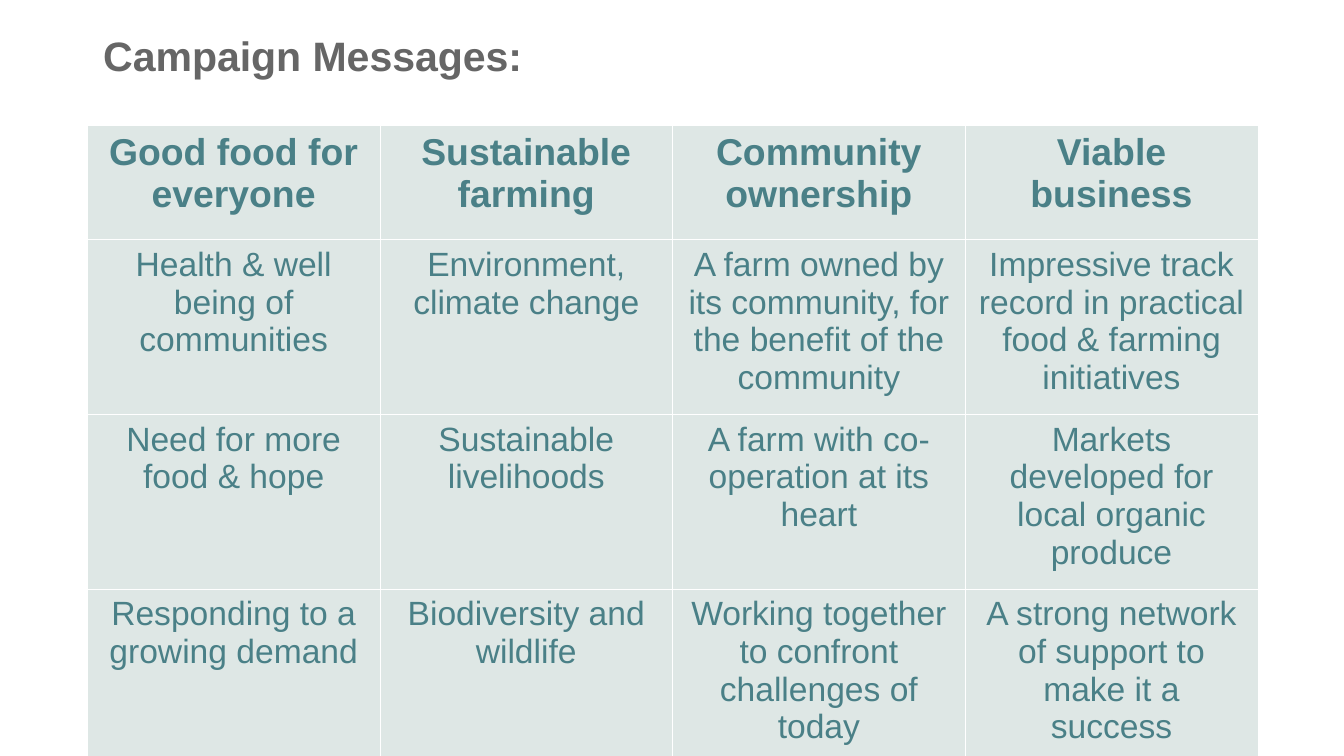
from dataclasses import dataclass

from lxml import etree
from pptx import Presentation
from pptx.dml.color import RGBColor
from pptx.enum.text import PP_ALIGN
from pptx.oxml.ns import qn
from pptx.util import Inches, Pt

CENTER = PP_ALIGN.CENTER
LEFT = PP_ALIGN.LEFT
FONT = "Arial"
GREY, TEAL, PALE, WHITE = "666666", "4A8087", "DEE7E5", "FFFFFF"
BORDER_PT = 0.06
SLIDE_W = 10
TABLE_W, HEAD_H, ROW_H = 8.71, 0.85, 1.22


@dataclass
class Theme:
    heading: str
    messages: list[str]


THEMES = [
    Theme("Good food for everyone", [
        "Health & well being of communities",
        "Need for more food & hope",
        "Responding to a growing demand"]),
    Theme("Sustainable farming", [
        "Environment, climate change",
        "Sustainable livelihoods",
        "Biodiversity and wildlife"]),
    Theme("Community ownership", [
        "A farm owned by its community, for the benefit of the community",
        "A farm with co-operation at its heart",
        "Working together to confront challenges of today"]),
    Theme("Viable business", [
        "Impressive track record in practical food & farming initiatives",
        "Markets developed for local organic produce",
        "A strong network of support to make it a success"]),
]


def rgb(color: str) -> RGBColor:
    return RGBColor.from_string(color)


def write(tf, text: str, size: int, color: str, bold: bool, align) -> None:
    p = tf.paragraphs[0]
    p.alignment = align
    r = p.add_run()
    r.text = text
    # Row heights are measured from run fonts, so the font is set on the run
    r.font.name = FONT
    r.font.size = Pt(size)
    r.font.bold = bold
    r.font.color.rgb = rgb(color)


def set_borders(cell, color: str, width: float) -> None:
    tc_pr = cell._tc.get_or_add_tcPr()
    for side in ("lnL", "lnR", "lnT", "lnB"):
        ln = etree.SubElement(tc_pr, qn(f"a:{side}"), w=str(Pt(width)))
        fill = etree.SubElement(ln, qn("a:solidFill"))
        etree.SubElement(fill, qn("a:srgbClr"), val=color)


def fill_cell(cell, text: str, is_head: bool) -> None:
    write(cell.text_frame, text, 20 if is_head else 18, TEAL, is_head, CENTER)
    set_borders(cell, WHITE, BORDER_PT)
    cell.fill.solid()
    cell.fill.fore_color.rgb = rgb(PALE)


def add_title(s, text: str) -> None:
    sp = s.shapes.add_textbox(Inches(0.67), Inches(0.18), Inches(8.76), Inches(4.24))
    sp.text_frame.word_wrap = True
    write(sp.text_frame, text, 22, GREY, True, LEFT)


def add_theme_table(s, themes: list[Theme]) -> None:
    n_rows = 1 + len(themes[0].messages)
    heights = [HEAD_H] + [ROW_H] * (n_rows - 1)
    table = s.shapes.add_table(
        n_rows, len(themes), Inches(0.65), Inches(0.93),
        Inches(TABLE_W), Inches(sum(heights))).table
    for row, height in zip(table.rows, heights):
        row.height = Inches(height)
    for col, theme in enumerate(themes):
        for row, text in enumerate([theme.heading, *theme.messages]):
            fill_cell(table.cell(row, col), text, row == 0)


def main() -> None:
    prs = Presentation()
    prs.slide_width = Inches(SLIDE_W)
    prs.slide_height = Inches(SLIDE_W * 9 / 16)
    s = prs.slides.add_slide(prs.slide_layouts[6])

    # Title
    add_title(s, "Campaign Messages:")

    # One column of messages per theme
    add_theme_table(s, THEMES)

    prs.save("out.pptx")


if __name__ == "__main__":
    main()
